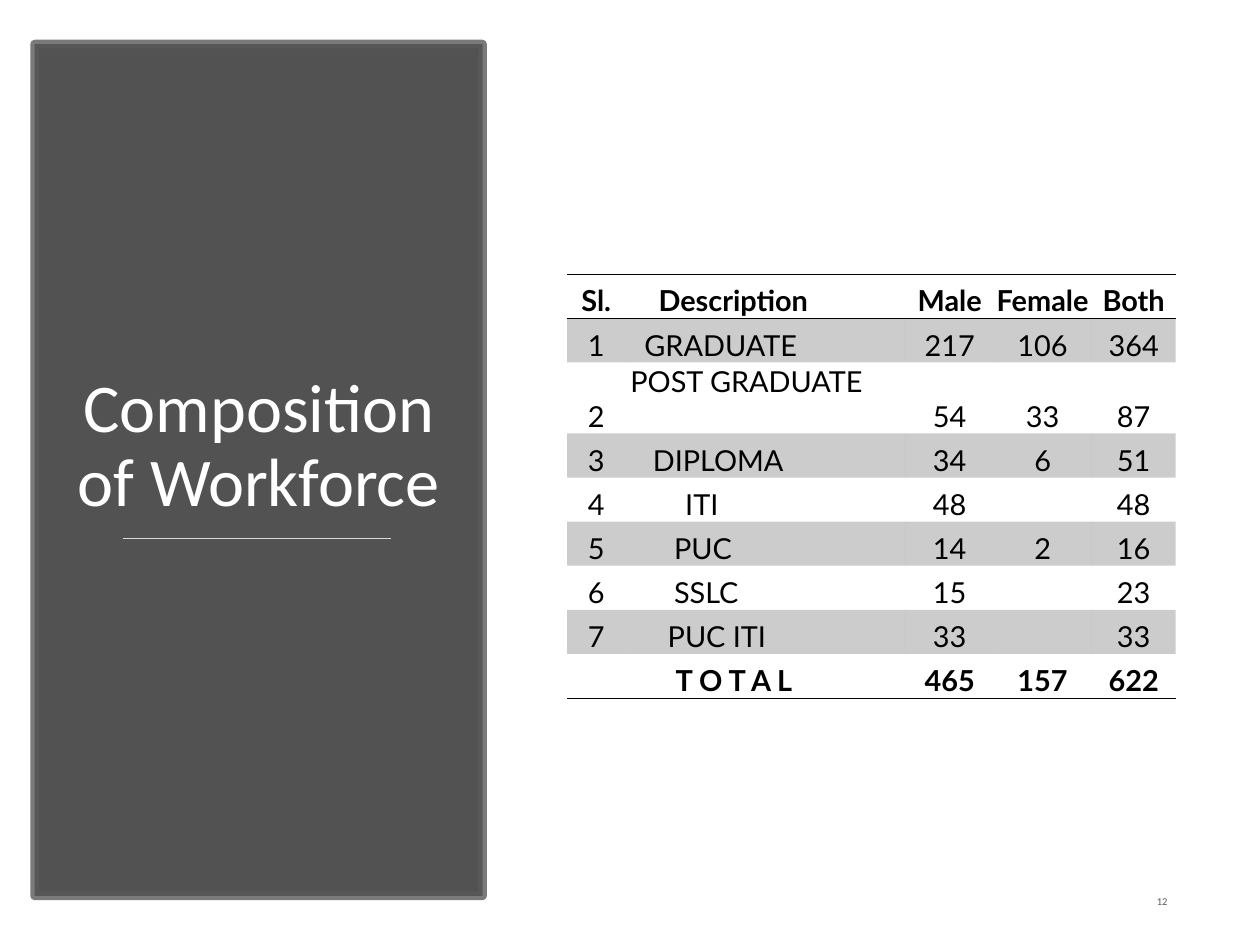
from lxml import etree
from pptx import Presentation
from pptx.dml.color import RGBColor
from pptx.enum.shapes import MSO_CONNECTOR, MSO_SHAPE
from pptx.enum.text import MSO_ANCHOR, MSO_AUTO_SIZE, PP_ALIGN
from pptx.oxml.ns import qn
from pptx.util import Inches, Pt

RECTANGLE = MSO_SHAPE.RECTANGLE
STRAIGHT = MSO_CONNECTOR.STRAIGHT
TOP, MIDDLE, BOTTOM = MSO_ANCHOR.TOP, MSO_ANCHOR.MIDDLE, MSO_ANCHOR.BOTTOM
CENTER, RIGHT = PP_ALIGN.CENTER, PP_ALIGN.RIGHT
NO_AUTOFIT = MSO_AUTO_SIZE.NONE

BLACK = RGBColor(0x00, 0x00, 0x00)
WHITE = RGBColor(0xFF, 0xFF, 0xFF)
PANEL_GRAY = RGBColor(0x40, 0x40, 0x40)
BORDER_GRAY = RGBColor(0x59, 0x59, 0x59)
RULE_GRAY = RGBColor(0xD9, 0xD9, 0xD9)

PLAIN_TABLE_STYLE = "{2D5ABB26-0587-4C30-8999-92F81FD0307C}"
COLUMN_WIDTHS = [0.93, 4.45, 1.39, 1.56, 1.33]
ROW_HEIGHT = 0.7
TALL_ROW, TALL_ROW_HEIGHT = 2, 1.13
CELL_MARGIN = 0.03
DESCRIPTION_COLUMN = 1
DESCRIPTION_MARGINS = [1.06, 1.46, 0.64, 1.54, 2.06, 2.02, 1.92, 1.58, 1.04]
WORKFORCE = [
    ["Sl.", "Description", "Male", "Female", "Both"],
    ["1", "GRADUATE", "217", "106", "364"],
    ["2", "POST GRADUATE", "54", "33", "87"],
    ["3", "DIPLOMA", "34", "6", "51"],
    ["4", "ITI", "48", "", "48"],
    ["5", "PUC", "14", "2", "16"],
    ["6", "SSLC", "15", "", "23"],
    ["7", "PUC ITI", "33", "", "33"],
    ["", "T O T A L", "465", "157", "622"],
]


def apply_format(target, values):
    for name, value in values.items():
        setattr(target, name, value)


def set_alpha(fill_parent, percent):
    color = next(fill_parent.iter(qn("a:srgbClr")))
    etree.SubElement(color, qn("a:alpha"), val=str(percent * 1000))


def write_text(frame, text, color, font, paragraph):
    para = frame.paragraphs[0]
    apply_format(para, paragraph)
    span = para.add_run()
    span.text = text
    apply_format(span.font, font)
    span.font.color.rgb = color


def add_panel(page):
    panel = page.shapes.add_shape(
        RECTANGLE, Inches(0.55), Inches(0.7), Inches(7.11), Inches(13.52))
    panel.shadow.inherit = False
    panel.fill.solid()
    panel.fill.fore_color.rgb = PANEL_GRAY
    set_alpha(panel._element.spPr.find(qn("a:solidFill")), 90)
    panel.line.color.rgb = BORDER_GRAY
    panel.line.width = Pt(10)
    set_alpha(panel._element.spPr.find(qn("a:ln")), 80)


def add_title(page):
    title = page.shapes.title
    apply_format(title, {"left": Inches(1.11), "top": Inches(2),
                         "width": Inches(6), "height": Inches(6.32)})
    apply_format(title.text_frame, {"word_wrap": True, "auto_size": NO_AUTOFIT,
                                    "vertical_anchor": BOTTOM})
    write_text(title.text_frame, "Composition of Workforce", WHITE,
               {"name": "Calibri", "size": Pt(78)},
               {"alignment": CENTER, "line_spacing": 0.9})
    page.shapes._spTree.append(title._element)


def add_title_rule(page):
    rule = page.shapes.add_connector(
        STRAIGHT, Inches(1.95), Inches(8.55), Inches(6.2), Inches(8.55))
    rule.line.color.rgb = RULE_GRAY
    rule.line.width = Pt(1.75)
    etree.SubElement(rule._element.spPr, qn("a:effectLst"))


def add_page_number(page):
    box = page.shapes.add_textbox(
        Inches(16.39), Inches(13.9), Inches(2.24), Inches(0.8))
    apply_format(box.text_frame, {"word_wrap": True, "vertical_anchor": MIDDLE})
    write_text(box.text_frame, "12", BORDER_GRAY,
               {"name": "Calibri", "size": Pt(12)},
               {"alignment": RIGHT, "space_after": Pt(6)})


def add_cell_border(cell, side):
    border = etree.SubElement(
        cell._tc.get_or_add_tcPr(), qn(f"a:{side}"), w=str(Pt(1)))
    fill = etree.SubElement(border, qn("a:solidFill"))
    etree.SubElement(fill, qn("a:srgbClr"), val=str(BLACK))


def fill_cell(cell, shaded):
    if shaded:
        cell.fill.solid()
        cell.fill.fore_color.rgb = BLACK
        set_alpha(cell._tc.tcPr, 20)
    else:
        cell.fill.background()


def format_cell(cell, row, column, text):
    last_row = len(WORKFORCE) - 1
    is_description = column == DESCRIPTION_COLUMN
    right = DESCRIPTION_MARGINS[row] if is_description else CELL_MARGIN
    apply_format(cell, {
        "margin_left": Inches(CELL_MARGIN), "margin_right": Inches(right),
        "margin_top": Inches(CELL_MARGIN), "margin_bottom": 0,
        "vertical_anchor": TOP if is_description and row == TALL_ROW else BOTTOM})
    if row == 0:
        add_cell_border(cell, "lnT")
    if row in (0, last_row):
        add_cell_border(cell, "lnB")
    fill_cell(cell, row % 2 == 1)
    if text:
        write_text(cell.text_frame, text, BLACK,
                   {"name": "Lato", "size": Pt(33), "bold": row in (0, last_row)},
                   {"alignment": CENTER})


def add_workforce_table(page):
    heights = [ROW_HEIGHT] * len(WORKFORCE)
    heights[TALL_ROW] = TALL_ROW_HEIGHT
    table = page.shapes.add_table(
        len(WORKFORCE), len(COLUMN_WIDTHS), Inches(9), Inches(4.35),
        Inches(sum(COLUMN_WIDTHS)), Inches(sum(heights))).table
    table._tbl.tblPr.find(qn("a:tableStyleId")).text = PLAIN_TABLE_STYLE
    apply_format(table, {"first_row": False, "horz_banding": False})
    for column, width in zip(table.columns, COLUMN_WIDTHS):
        column.width = Inches(width)
    for row, values in enumerate(WORKFORCE):
        table.rows[row].height = Inches(heights[row])
        for column, text in enumerate(values):
            format_cell(table.cell(row, column), row, column, text)


def main():
    deck = Presentation()
    apply_format(deck, {"slide_width": Inches(20), "slide_height": Inches(15)})
    page = deck.slides.add_slide(deck.slide_layouts.get_by_name("Title Only"))
    add_panel(page)
    add_title(page)
    add_title_rule(page)
    add_page_number(page)
    add_workforce_table(page)
    deck.save("out.pptx")


if __name__ == "__main__":
    main()
